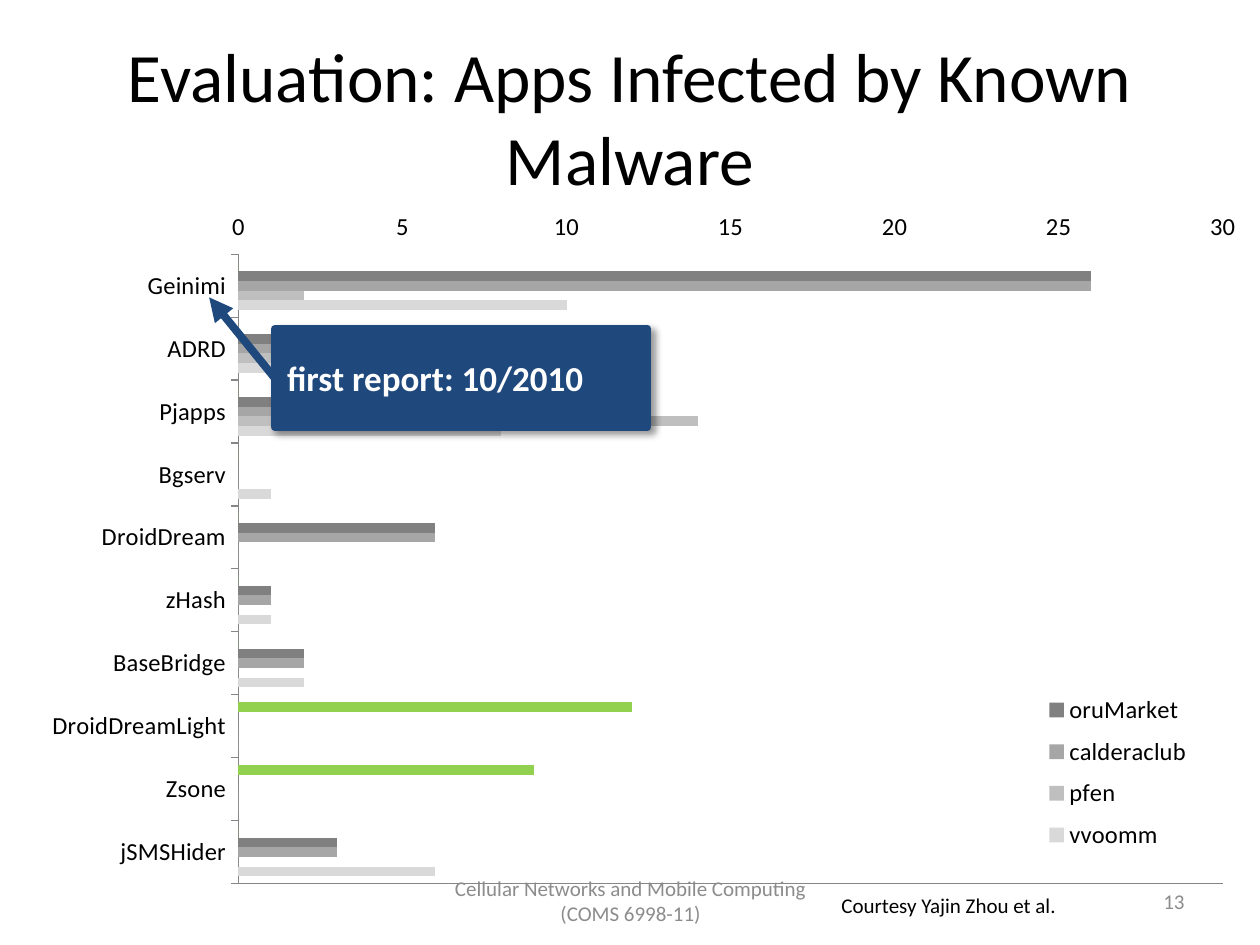
from lxml import etree
from pptx import Presentation
from pptx.chart.data import CategoryChartData
from pptx.dml.color import RGBColor
from pptx.enum.chart import XL_CHART_TYPE, XL_LEGEND_POSITION, XL_TICK_LABEL_POSITION, XL_TICK_MARK
from pptx.enum.shapes import MSO_CONNECTOR, MSO_SHAPE
from pptx.enum.text import MSO_ANCHOR, PP_ALIGN
from pptx.oxml import parse_xml
from pptx.oxml.ns import nsdecls, qn
from pptx.util import Inches, Pt

THEME = {
    "font": "Calibri",
    "ink": "000000", "muted": "8C8C8C", "accent": "1F497D", "white": "FFFFFF", "axis": "868686",
    "title": 39.6, "callout": 20, "chart": 14, "small": 12, "thick": 4.5,
}

FAMILIES = ["jSMSHider", "Zsone", "DroidDreamLight", "BaseBridge", "zHash",
            "DroidDream", "Bgserv", "Pjapps", "ADRD", "Geinimi"]
MARKETS = [
    ("vvoomm", "D9D9D9", (6, 0, 0, 2, 1, 0, 1, 8, 3, 10)),
    ("pfen", "BFBFBF", (0, 0, 0, 0, 0, 0, 0, 14, 4, 2)),
    ("calderaclub", "A6A6A6", (3, 0, 0, 2, 1, 6, 0, 9, 1, 26)),
    ("oruMarket", "808080", (3, 0, 0, 2, 1, 6, 0, 12, 1, 26)),
    ("Official Market", "92D050", (0, 9, 12, 0, 0, 0, 0, 0, 0, 0)),
]
UNLISTED_MARKET = 0
CHART_BOX = (0.16, 1.64, 9.68, 5.65)
PLOT_LAYOUT = {"x": 0.179, "y": 0.067, "w": 0.807, "h": 0.884}
LEGEND_LAYOUT = {"x": 0.81, "y": 0.67, "w": 0.18, "h": 0.25}

# text, box, size, colour, alignment, wrap
LABELS = [
    ("Evaluation: Apps Infected by Known Malware", (0.5, 0.3, 9, 1.25),
     "title", "ink", PP_ALIGN.CENTER, True),
    ("Cellular Networks and Mobile Computing (COMS 6998-11)", (3.42, 6.95, 3.17, 0.4),
     "small", "muted", PP_ALIGN.CENTER, True),
    ("13", (7.17, 6.95, 2.33, 0.4), "small", "muted", PP_ALIGN.RIGHT, True),
    ("Courtesy Yajin Zhou et al.", (6.58, 7.03, 1.94, 0.3),
     "small", "ink", PP_ALIGN.LEFT, False),
]
CALLOUT = ("first report: 10/2010", (2.18, 2.61, 2.96, 0.78))
ARROW = (2.18, 3, 1.66, 2.36)


def inches(values):
    return [Inches(value) for value in values]


def color(name):
    return RGBColor.from_string(THEME.get(name, name))


def style_font(font, size, ink, bold=False):
    values = {"name": THEME["font"], "size": Pt(THEME[size]), "bold": bold}
    for key, value in values.items():
        setattr(font, key, value)
    font.color.rgb = color(ink)


def write(shape, text, size, ink, align, wrap=True, bold=False):
    frame = shape.text_frame
    frame.word_wrap = wrap
    frame.vertical_anchor = MSO_ANCHOR.MIDDLE
    paragraph = frame.paragraphs[0]
    paragraph.alignment = align
    run = paragraph.add_run()
    run.text = text
    style_font(run.font, size, ink, bold)


def manual_layout(values, inner=False):
    target = '<c:layoutTarget val="inner"/>' if inner else ""
    modes = "".join(f'<c:{key}Mode val="edge"/>' for key in "xy")
    sizes = "".join(f'<c:{key} val="{value}"/>' for key, value in values.items())
    return parse_xml(f'<c:layout {nsdecls("c")}><c:manualLayout>{target}{modes}{sizes}'
                     '</c:manualLayout></c:layout>')


def replace_layout(parent, layout, position):
    for old in parent.findall(qn("c:layout")):
        parent.remove(old)
    parent.insert(position, layout)


def add_market_chart(slide):
    data = CategoryChartData(number_format="0")
    data.categories = FAMILIES
    for name, _, counts in MARKETS:
        data.add_series(name, counts)
    chart = slide.shapes.add_chart(XL_CHART_TYPE.BAR_CLUSTERED, *inches(CHART_BOX), data).chart
    chart.has_title = False
    style_font(chart.font, "chart", "ink")

    plot = chart.plots[0]
    plot.gap_width, plot.overlap, plot.vary_by_categories = 150, 0, False
    for series, (_, fill, _) in zip(plot.series, MARKETS):
        series.format.fill.solid()
        series.format.fill.fore_color.rgb = color(fill)

    axes = [
        (chart.category_axis, XL_TICK_MARK.OUTSIDE, XL_TICK_LABEL_POSITION.NEXT_TO_AXIS),
        (chart.value_axis, XL_TICK_MARK.NONE, XL_TICK_LABEL_POSITION.HIGH),
    ]
    for axis, tick, label_position in axes:
        values = {"has_major_gridlines": False, "major_tick_mark": tick,
                  "minor_tick_mark": XL_TICK_MARK.NONE, "tick_label_position": label_position}
        for key, value in values.items():
            setattr(axis, key, value)
        axis.format.line.color.rgb = color("axis")
        style_font(axis.tick_labels.font, "chart", "ink")
    for key, value in {"minimum_scale": 0, "maximum_scale": 30, "major_unit": 5}.items():
        setattr(chart.value_axis, key, value)

    chart.has_legend = True
    legend = chart.legend
    legend.position, legend.include_in_layout = XL_LEGEND_POSITION.RIGHT, False
    style_font(legend.font, "chart", "ink")
    legend_xml = legend.font and chart.element.find(".//" + qn("c:legend"))
    legend_xml.insert(1, parse_xml(
        f'<c:legendEntry {nsdecls("c")}><c:idx val="{UNLISTED_MARKET}"/>'
        '<c:delete val="1"/></c:legendEntry>'))
    replace_layout(legend_xml, manual_layout(LEGEND_LAYOUT), 2)
    replace_layout(chart.element.find(".//" + qn("c:plotArea")),
                   manual_layout(PLOT_LAYOUT, inner=True), 0)


def style_line(line):
    line.color.rgb = color("accent")
    line.width = Pt(THEME["thick"])


def add_callout(slide):
    text, box = CALLOUT
    callout = slide.shapes.add_shape(MSO_SHAPE.RECTANGLE, *inches(box))
    callout.shadow.inherit = False
    callout.fill.solid()
    callout.fill.fore_color.rgb = color("accent")
    style_line(callout.line)
    etree.SubElement(callout.line._get_or_add_ln(), qn("a:round"))
    effects = callout._element.spPr.find(qn("a:effectLst"))
    effects.append(parse_xml(
        f'<a:outerShdw {nsdecls("a")} blurRad="{Pt(4)}" dist="{Pt(3)}" dir="{45 * 60000}">'
        '<a:srgbClr val="000000"><a:alpha val="40000"/></a:srgbClr></a:outerShdw>'))
    write(callout, text, "callout", "white", PP_ALIGN.LEFT, bold=True)

    arrow = slide.shapes.add_connector(MSO_CONNECTOR.STRAIGHT, *inches(ARROW))
    style_line(arrow.line)
    etree.SubElement(arrow.line._get_or_add_ln(), qn("a:tailEnd"), type="triangle")
    etree.SubElement(arrow._element.spPr, qn("a:effectLst"))


def main():
    deck = Presentation()
    deck.slide_width, deck.slide_height = Inches(10), Inches(7.5)
    slide = deck.slides.add_slide(deck.slide_layouts[6])
    add_market_chart(slide)
    add_callout(slide)
    for text, box, size, ink, align, wrap in LABELS:
        write(slide.shapes.add_textbox(*inches(box)), text, size, ink, align, wrap)
    deck.save("out.pptx")


if __name__ == "__main__":
    main()
